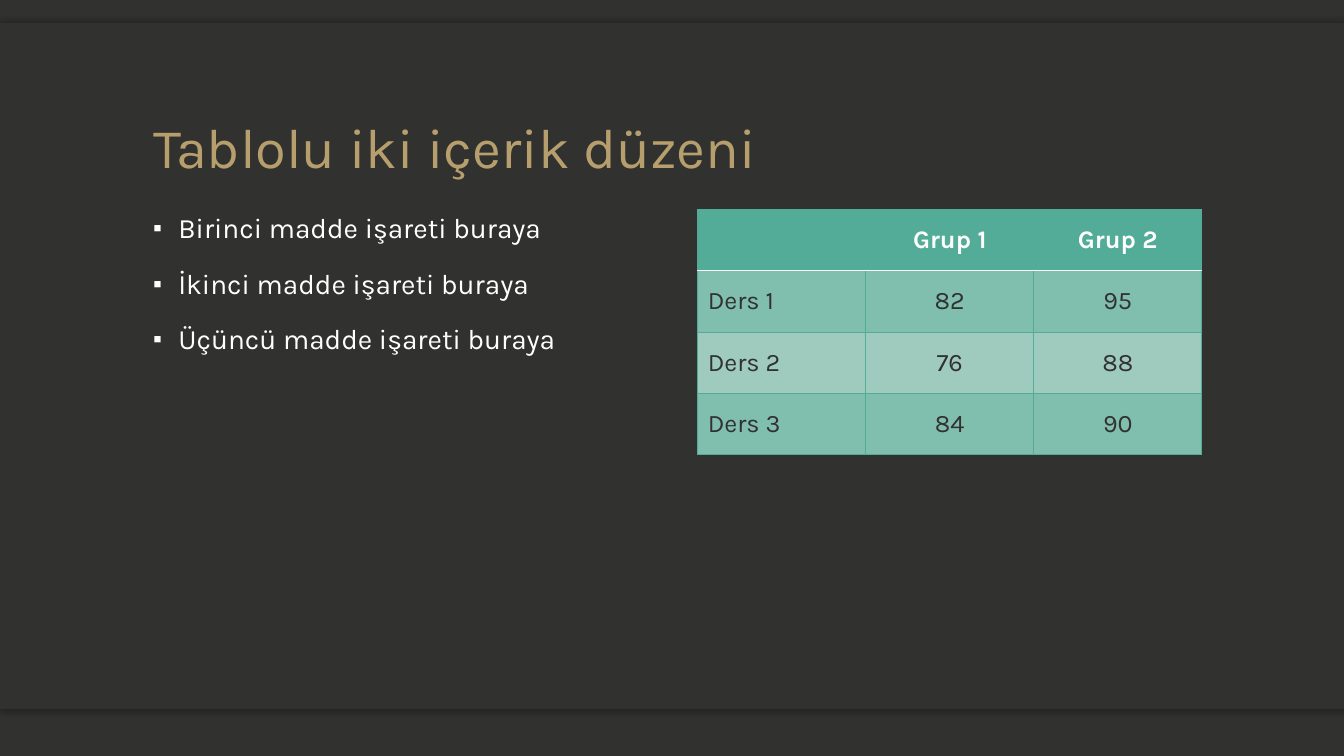
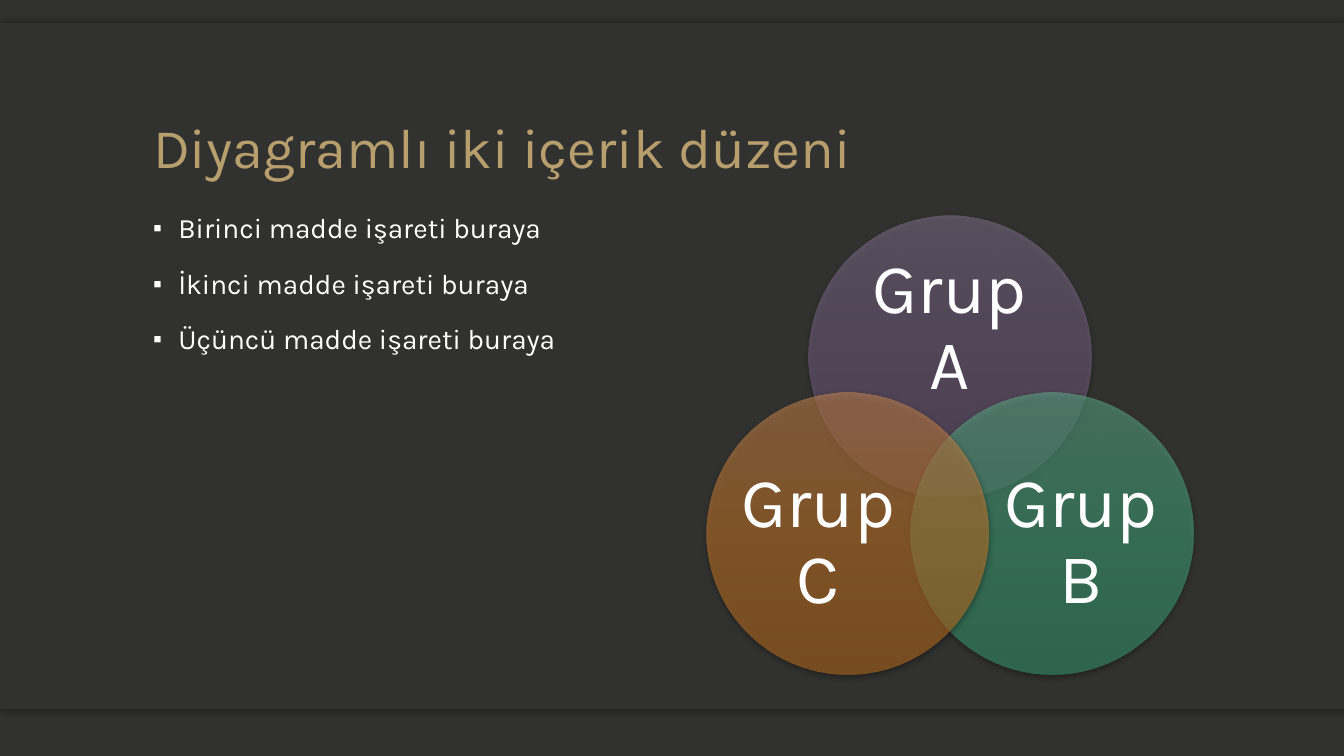
"""Build two dark two-column slides: bullets beside a table and beside a Venn diagram."""
import math

from lxml import etree
from pptx import Presentation
from pptx import util as u
from pptx.dml.color import RGBColor
from pptx.enum import shapes, text
from pptx.oxml.ns import qn

COLORS = {"base": "31312F", "gold": "B79E6D", "white": "FFFFFF", "black": "000000",
          "teal": "52AC97", "teal_mid": "80BEAE", "teal_light": "9FCABE"}
FONT = "Karla"
WIDTH, HEIGHT = 13.33, 7.5
LEFT, COLUMN, GUTTER = 1.42, 5, 0.5
RIGHT = LEFT + COLUMN + GUTTER
BODY_TOP, BODY_HEIGHT = 2.08, 4.67
BAND_TOP, BAND_HEIGHT, PANEL_HEIGHT = 0.23, 0.49, 6.8
BULLETS = ["Birinci madde işareti buraya", "İkinci madde işareti buraya",
           "Üçüncü madde işareti buraya"]
SCORES = [["", "Grup 1", "Grup 2"], ["Ders 1", "82", "95"],
          ["Ders 2", "76", "88"], ["Ders 3", "84", "90"]]
CIRCLES = [
    ("Grup A", -90, ("907D9B", "826A90", "745D81"), (0, -0.28), (2.05, 1.26)),
    ("Grup B", 30, ("69BB96", "4BB88A", "3DA97B"), (0.29, 0.09), (1.68, 1.54)),
    ("Grup C", 150, ("DB945A", "DD862F", "CD7721"), (-0.29, 0.09), (1.68, 1.54)),
]


def rgb(name):
    """Return the named colour."""
    return RGBColor.from_string(COLORS[name])


def inches(*lengths):
    """Convert lengths in inches."""
    return [u.Inches(length) for length in lengths]


def child(parent, tag, **attributes):
    """Append a drawing element with attributes."""
    node = etree.SubElement(parent, qn(tag))
    for key, value in attributes.items():
        node.set(key, str(value))
    return node


def add_color(parent, value, alpha=100):
    """Append an RGB colour with an opacity in percent."""
    color = child(parent, "a:srgbClr", val=value)
    if alpha < 100:
        child(color, "a:alpha", val=alpha * 1000)


def add_shadow(shape, alpha, blur, distance, angle):
    """Give a shape an outer shadow."""
    effects = shape._element.spPr.find(qn("a:effectLst"))
    shadow = child(effects, "a:outerShdw", blurRad=u.Pt(blur), dist=u.Pt(distance),
                   dir=angle * 60000, algn="ctr", rotWithShape=0)
    add_color(shadow, COLORS["black"], alpha)


def write(para, content, size=20, color="white", bold=False, align=None,
          spacing=None, before=None, bullet=None):
    """Write formatted text into a paragraph."""
    if bullet:
        props = para._p.get_or_add_pPr()
        props.set("marL", str(u.Inches(0.25)))
        props.set("indent", str(-u.Inches(0.25)))
        child(props, "a:buSzPct", val=90000)
        child(props, "a:buFont", typeface="Arial")
        child(props, "a:buChar", char=bullet)
    if align:
        para.alignment = align
    if spacing:
        para.line_spacing = spacing
    if before:
        para.space_before = u.Pt(before)
    span = para.add_run()
    span.text = content
    span.font.name, span.font.size, span.font.bold = FONT, u.Pt(size), bold
    span.font.color.rgb = rgb(color)


def add_box(page, area, anchor=text.MSO_ANCHOR.TOP, inset=None):
    """Add a wrapping text box and return its frame."""
    frame = page.shapes.add_textbox(*inches(*area)).text_frame
    frame.word_wrap = True
    frame.vertical_anchor = anchor
    if inset is not None:
        frame.margin_left = frame.margin_right = u.Inches(inset)
        frame.margin_top = frame.margin_bottom = u.Inches(inset)
    return frame


def add_shape(page, kind, area):
    """Add a preset shape without outline or shadow."""
    shape = page.shapes.add_shape(kind, *inches(*area))
    shape.line.fill.background()
    shape.shadow.inherit = False
    return shape


def add_panel(page, top, height, shadow_angle=None):
    """Add a full-width panel, with a shadow if an angle is given."""
    panel = add_shape(page, shapes.MSO_SHAPE.RECTANGLE, (0, top, WIDTH, height))
    panel.fill.solid()
    panel.fill.fore_color.rgb = rgb("base")
    if shadow_angle:
        add_shadow(panel, 25, 4, 2, shadow_angle)


def add_page(deck, title):
    """Add a slide with the shared panels, title and bullets."""
    page = deck.slides.add_slide(deck.slide_layouts[6])
    page.background.fill.solid()
    page.background.fill.fore_color.rgb = rgb("base")
    add_panel(page, BAND_TOP + PANEL_HEIGHT - BAND_HEIGHT, BAND_HEIGHT, 90)
    add_panel(page, BAND_TOP, BAND_HEIGHT, 270)
    add_panel(page, BAND_TOP, PANEL_HEIGHT)
    heading = add_box(page, (LEFT, 0.46, 2 * COLUMN + GUTTER, 1.38), text.MSO_ANCHOR.BOTTOM)
    write(heading.paragraphs[0], title, size=40, color="gold", spacing=0.9)
    body = add_box(page, (LEFT, BODY_TOP, COLUMN, BODY_HEIGHT))
    for index, item in enumerate(BULLETS):
        para = body.add_paragraph() if index else body.paragraphs[0]
        write(para, item, spacing=0.9, before=18 if index else None, bullet="▪")
    return page


def add_border(cell, side, color, width):
    """Draw one cell border."""
    line = child(cell._tc.get_or_add_tcPr(), f"a:ln{side}", w=u.Pt(width))
    add_color(child(line, "a:solidFill"), COLORS[color])


def add_scores(page):
    """Add the table of scores in the right column."""
    rows, columns = len(SCORES), len(SCORES[0])
    table = page.shapes.add_table(
        rows, columns, *inches(RIGHT, BODY_TOP, COLUMN, 2.43)).table
    for row, values in enumerate(SCORES):
        for column, value in enumerate(values):
            cell = table.cell(row, column)
            cell.vertical_anchor = text.MSO_ANCHOR.MIDDLE
            for side in "LRTB":
                divider = (row, side) in ((0, "B"), (1, "T"))
                add_border(cell, side, *(("white", 1) if divider else ("teal", 0.5)))
            cell.fill.solid()
            fill = "teal" if row == 0 else ("teal_light", "teal_mid")[row % 2]
            cell.fill.fore_color.rgb = rgb(fill)
            if value:
                write(cell.text_frame.paragraphs[0], value, size=18, bold=row == 0,
                      color="base" if row else "white",
                      align=text.PP_ALIGN.CENTER if column else text.PP_ALIGN.LEFT)


def add_circle(page, center, diameter, stops):
    """Add a half-transparent gradient circle."""
    left, top = (value - diameter / 2 for value in center)
    circle = add_shape(page, shapes.MSO_SHAPE.OVAL, (left, top, diameter, diameter))
    circle.fill.gradient()
    circle.fill.gradient_angle = 270
    stop_list = circle._element.spPr.find(qn("a:gradFill")).find(qn("a:gsLst"))
    for stop in list(stop_list):
        stop_list.remove(stop)
    for index, value in enumerate(stops):
        add_color(child(stop_list, "a:gs", pos=index * 50000), value, 50)
    add_shadow(circle, 63, 4.5, 1.5, 90)


def add_venn(page):
    """Add three circles around a common centre, each with its label."""
    middle_x, middle_y, orbit = RIGHT + COLUMN / 2, 4.71, 1.17
    for label, angle, stops, shift, (width, height) in CIRCLES:
        x = middle_x + orbit * math.cos(math.radians(angle))
        y = middle_y + orbit * math.sin(math.radians(angle))
        add_circle(page, (x, y), 2.8, stops)
        area = (x + shift[0] - width / 2, y + shift[1] - height / 2, width, height)
        frame = add_box(page, area, text.MSO_ANCHOR.MIDDLE, inset=0)
        write(frame.paragraphs[0], label, size=50, spacing=0.9, align=text.PP_ALIGN.CENTER)


def main():
    """Build and save the deck."""
    deck = Presentation()
    deck.slide_width, deck.slide_height = inches(WIDTH, HEIGHT)
    add_scores(add_page(deck, "Tablolu iki içerik düzeni"))
    add_venn(add_page(deck, "Diyagramlı iki içerik düzeni"))
    deck.save("out.pptx")


if __name__ == "__main__":
    main()
